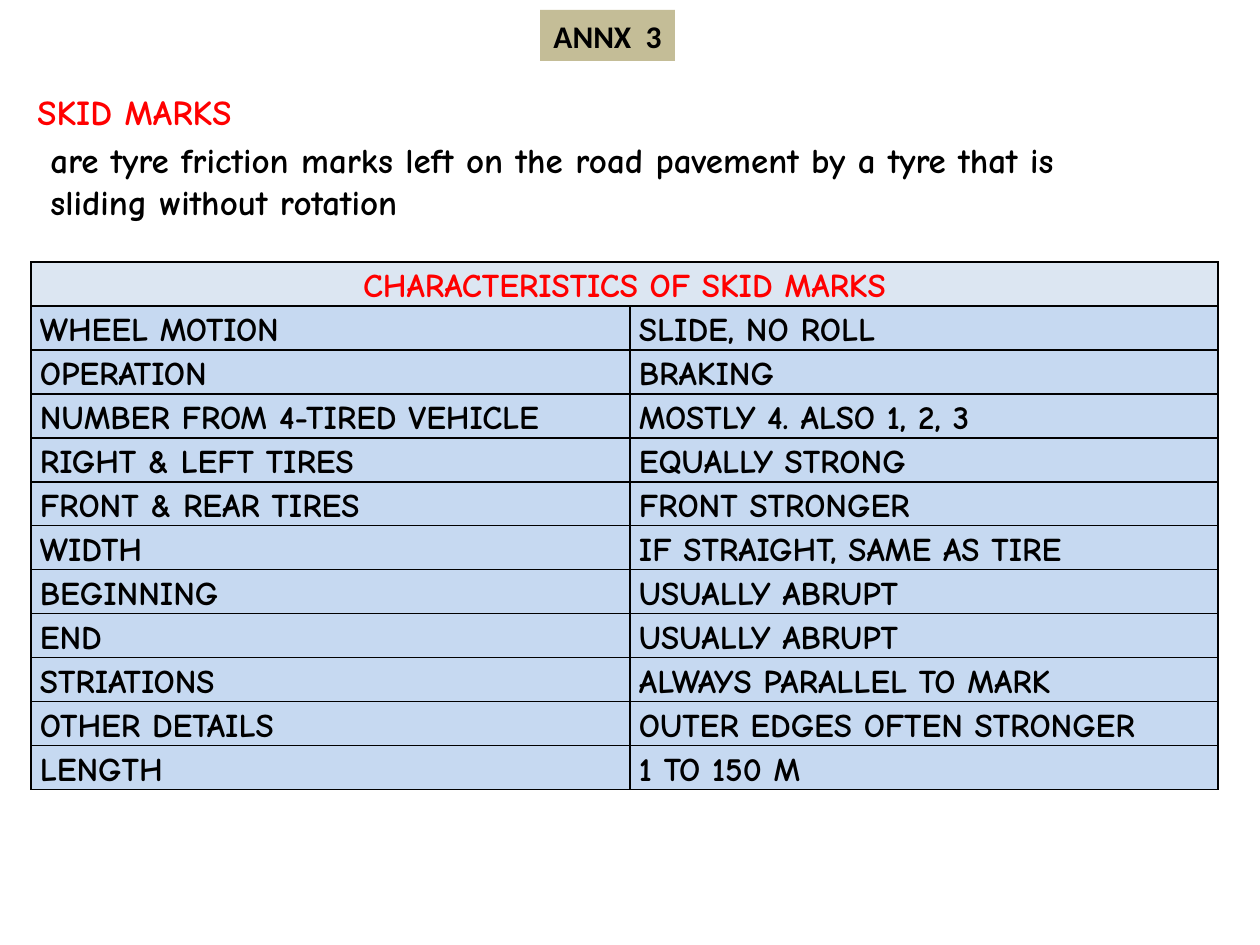
from typing import NamedTuple

from lxml.etree import SubElement
from pptx import Presentation
from pptx.dml.color import RGBColor
from pptx.enum.shapes import MSO_SHAPE
from pptx.enum.text import MSO_ANCHOR, PP_ALIGN
from pptx.oxml.ns import qn
from pptx.util import Emu, Pt

PX = 914400 / 126
BLACK, RED = "000000", "FF0000"
HEADER_FILL, BODY_FILL, LABEL_FILL = "DCE6F2", "C6D9F1", "C4BD97"


class Line(NamedTuple):
    text: str
    size: int
    color: str = BLACK
    font: str = "Comic Neue"
    indent: int = 0
    format: dict = {}


def px(length: int) -> Emu:
    return Emu(round(length * PX))


def rgb(color: str) -> RGBColor:
    return RGBColor.from_string(color)


def write_lines(frame, lines: list[Line]) -> None:
    for index, line in enumerate(lines):
        paragraph = frame.add_paragraph() if index else frame.paragraphs[0]
        if line.indent:
            paragraph._p.get_or_add_pPr().set("marL", str(px(line.indent)))
        for name, value in line.format.items():
            setattr(paragraph, name, value)
        run = paragraph.add_run()
        run.text = line.text
        font_format = {"name": line.font, "size": Pt(line.size), "bold": True}
        for name, value in font_format.items():
            setattr(run.font, name, value)
        run.font.color.rgb = rgb(line.color)


def add_borders(cell) -> None:
    properties = cell._tc.get_or_add_tcPr()
    for position, side in enumerate(("lnL", "lnR", "lnT", "lnB")):
        border = SubElement(properties, qn(f"a:{side}"), w=str(Pt(1)))
        fill = SubElement(border, qn("a:solidFill"))
        SubElement(fill, qn("a:srgbClr"), val=BLACK)
        properties.insert(position, border)


def fill_cell(cell, text: str, fill: str, color: str, alignment: PP_ALIGN) -> None:
    cell_format = {
        "margin_left": px(9), "margin_right": px(9),
        "margin_top": 0, "margin_bottom": 0,
        "vertical_anchor": MSO_ANCHOR.TOP,
    }
    for name, value in cell_format.items():
        setattr(cell, name, value)
    cell.fill.solid()
    cell.fill.fore_color.rgb = rgb(fill)
    add_borders(cell)
    if text:
        paragraph_format = {"alignment": alignment, "line_spacing": 1.15}
        write_lines(cell.text_frame, [Line(text, 19, color, format=paragraph_format)])


CHARACTERISTICS = [
    ("WHEEL MOTION", "SLIDE, NO ROLL"),
    ("OPERATION", "BRAKING"),
    ("NUMBER FROM 4-TIRED VEHICLE", "MOSTLY 4. ALSO 1, 2, 3"),
    ("RIGHT & LEFT TIRES", "EQUALLY STRONG"),
    ("FRONT & REAR TIRES", "FRONT STRONGER"),
    ("WIDTH", "IF STRAIGHT, SAME AS TIRE"),
    ("BEGINNING", "USUALLY ABRUPT"),
    ("END", "USUALLY ABRUPT"),
    ("STRIATIONS", "ALWAYS PARALLEL TO MARK"),
    ("OTHER DETAILS", "OUTER EDGES OFTEN STRONGER"),
    ("LENGTH", "1 TO 150 M"),
]
COLUMN_WIDTHS = (599, 588)
ROW_HEIGHT = 44


def add_characteristics(slide) -> None:
    row_count = len(CHARACTERISTICS) + 1
    table = slide.shapes.add_table(
        row_count, len(COLUMN_WIDTHS), px(31), px(262),
        px(sum(COLUMN_WIDTHS)), px(row_count * ROW_HEIGHT),
    ).table
    for column, width in zip(table.columns, COLUMN_WIDTHS):
        column.width = px(width)
    for row in table.rows:
        row.height = px(ROW_HEIGHT)

    # Title row across both columns
    table.cell(0, 0).merge(table.cell(0, 1))
    for column, text in enumerate(("CHARACTERISTICS OF SKID MARKS", "")):
        fill_cell(table.cell(0, column), text, HEADER_FILL, RED, PP_ALIGN.CENTER)

    # Name and value rows
    for row, texts in enumerate(CHARACTERISTICS, start=1):
        for column, text in enumerate(texts):
            fill_cell(table.cell(row, column), text, BODY_FILL, BLACK, PP_ALIGN.LEFT)


def add_definition(slide) -> None:
    box = slide.shapes.add_textbox(px(25), px(84), px(1218), px(146))
    box.text_frame.word_wrap = True
    write_lines(box.text_frame, [
        Line("SKID MARKS", 20, RED),
        Line("are tyre friction marks left on the road pavement by a tyre that is",
             20, indent=13, format={"space_before": Pt(3.5)}),
        Line("sliding without rotation", 20, indent=13),
    ])


def add_annex_label(slide) -> None:
    label = slide.shapes.add_shape(MSO_SHAPE.RECTANGLE, px(540), px(10), px(135), px(51))
    label.shadow.inherit = False
    label.fill.solid()
    label.fill.fore_color.rgb = rgb(LABEL_FILL)
    label.line.fill.background()
    label.text_frame.word_wrap = False
    write_lines(label.text_frame, [
        Line("ANNX  3", 18, font="Calibri", format={"alignment": PP_ALIGN.CENTER}),
    ])


def main() -> None:
    presentation = Presentation()
    presentation.slide_width, presentation.slide_height = px(1260), px(945)
    slide = presentation.slides.add_slide(presentation.slide_layouts[6])
    add_characteristics(slide)
    add_definition(slide)
    add_annex_label(slide)
    presentation.save("out.pptx")


if __name__ == "__main__":
    main()
